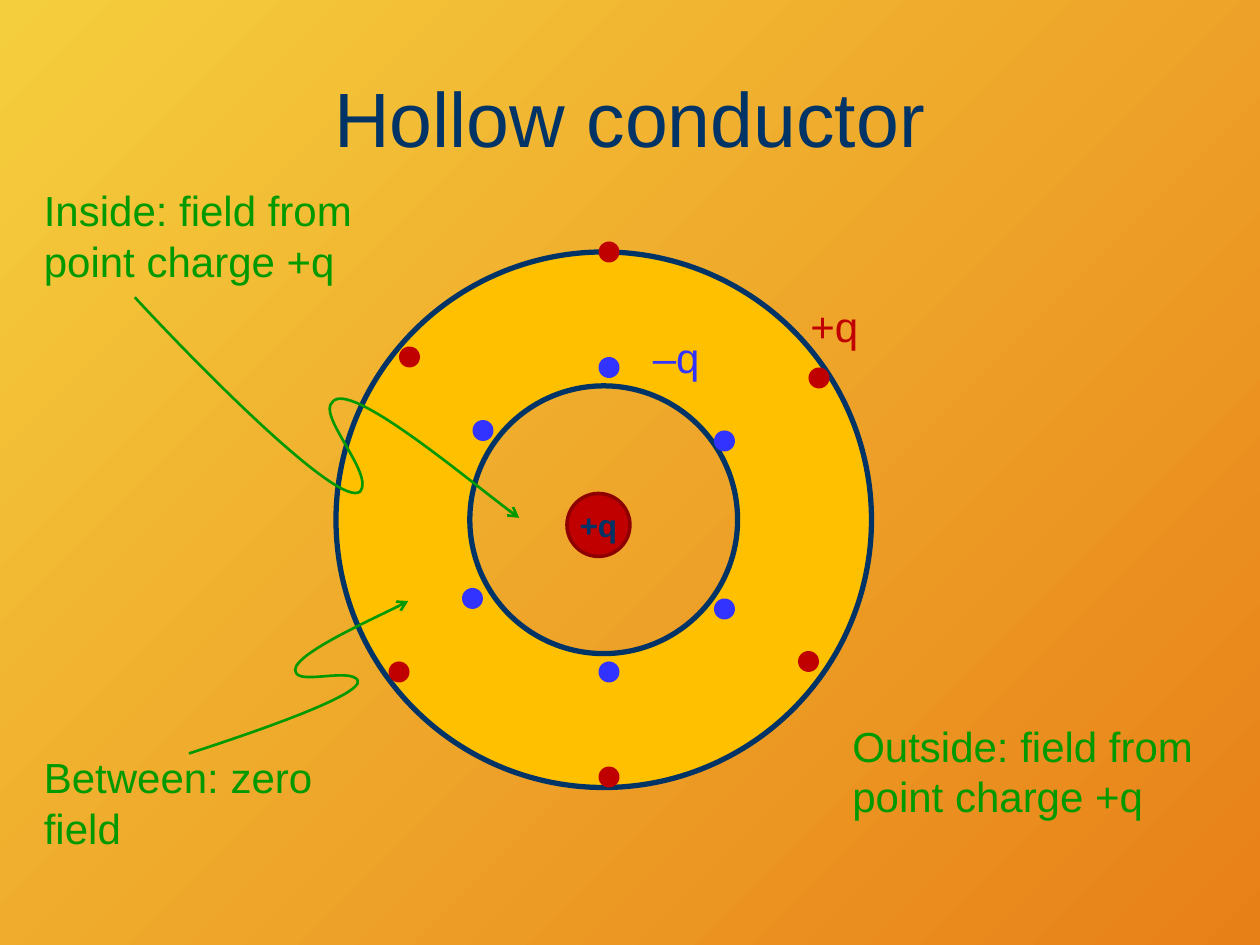
import dataclasses
import typing

import pptx
import pptx.dml.color
import pptx.enum.shapes
import pptx.enum.text
import pptx.oxml
import pptx.oxml.ns
import pptx.util

KIND = pptx.enum.shapes.MSO_SHAPE
ALIGN = pptx.enum.text.PP_ALIGN
ANCHOR = pptx.enum.text.MSO_ANCHOR
NAVY, RED, BLUE, GREEN = "003366", "C00000", "3333FF", "009900"
Point = tuple[float, float]


@dataclasses.dataclass
class Box:
    """Columns and rows of a grid with twelve cells to the inch."""
    col: float
    row: float
    wide: float
    high: float


@dataclasses.dataclass
class Label:
    words: str
    box: Box
    color: str


@dataclasses.dataclass
class Ring:
    """A set of equal charges, each given by its column and row."""
    color: str
    spots: list[Point]


def cell(count: float) -> int:
    return pptx.util.Inches(count / 12)


def place(box: Box) -> list[int]:
    return [cell(n) for n in (box.col, box.row, box.wide, box.high)]


def rgb(code: str) -> pptx.dml.color.RGBColor:
    return pptx.dml.color.RGBColor.from_string(code)


def write(frame: typing.Any, words: str, color: str, size: float = 24,
          bold: bool = False, align: typing.Any = ALIGN.LEFT,
          anchor: typing.Any = ANCHOR.TOP) -> None:
    frame.word_wrap = True
    frame.vertical_anchor = anchor
    para = frame.paragraphs[0]
    para.alignment = align
    run = para.add_run()
    run.text = words
    run.font.name = "Arial"
    run.font.size = pptx.util.Pt(size)
    run.font.bold = bold
    run.font.color.rgb = rgb(color)


def label(slide: typing.Any, item: Label, **style: typing.Any) -> None:
    write(slide.shapes.add_textbox(*place(item.box)).text_frame,
          item.words, item.color, **style)


def shape(slide: typing.Any, kind: typing.Any, box: Box, fill: str,
          edge: str = "", width: float = 0) -> typing.Any:
    item = slide.shapes.add_shape(kind, *place(box))
    item.shadow.inherit = False
    item.fill.solid()
    item.fill.fore_color.rgb = rgb(fill)
    if edge:
        item.line.color.rgb = rgb(edge)
        item.line.width = pptx.util.Pt(width)
    else:
        item.line.fill.background()
    return item


def curve(slide: typing.Any, points: list[Point]) -> None:
    """Draw a Bezier arrow: a start, then three points (inches) per piece."""
    first, *rest = [(pptx.util.Inches(x), pptx.util.Inches(y)) for x, y in points]
    build = slide.shapes.build_freeform(*first)
    build.add_line_segments(rest, close=False)
    item = build.convert_to_shape()
    item.shadow.inherit = False
    item.fill.background()
    item.line.color.rgb = rgb(GREEN)
    item.line.width = pptx.util.Pt(1.5)

    name = pptx.oxml.ns.qn
    steps = list(item.element.iter(name("a:lnTo")))
    for start in range(0, len(steps), 3):
        bend = steps[start].makeelement(name("a:cubicBezTo"), {})
        steps[start].addprevious(bend)
        for step in steps[start:start + 3]:
            bend.append(step[0])
            step.getparent().remove(step)

    head = item.element.makeelement(name("a:tailEnd"), {"type": "arrow"})
    item.element.spPr.find(name("a:ln")).append(head)


def paint(slide: typing.Any) -> None:
    fill = slide.background.fill
    fill.gradient()
    fill.gradient_angle = 315
    for stop, color, spot in zip(fill.gradient_stops, ("F5CE3D", "E88018"), (0, 1)):
        stop.color.rgb = rgb(color)
        stop.position = spot


TITLE = Label("Hollow conductor", Box(6, 3.6, 108, 15), NAVY)
RINGS = [
    Ring(RED, [(57, 23), (57, 73), (77, 35), (37, 63), (38, 33), (76, 62)]),
    Ring(BLUE, [(57, 34), (57, 63), (68, 41), (44, 56), (45, 40), (68, 57)]),
]
LABELS = [
    Label("–q", Box(61, 31, 9, 6), BLUE),
    Label("+q", Box(76, 28, 9, 6), RED),
    Label("Outside: field from point charge +q", Box(80, 68, 35, 11), GREEN),
    Label("Inside: field from point charge +q", Box(3, 17, 35, 11), GREEN),
    Label("Between: zero field", Box(3, 71, 35, 11), GREEN),
]
CURVES = [
    [(1.07, 2.36), (1.56, 2.89), (2.7, 4.05), (2.86, 3.9), (2.97, 3.76),
     (2.51, 3.29), (2.64, 3.19), (2.77, 3.01), (3.86, 3.93), (4.12, 4.11)],
    [(1.5, 5.98), (1.93, 5.84), (2.89, 5.52), (2.84, 5.4), (2.78, 5.3),
     (2.39, 5.43), (2.35, 5.34), (2.27, 5.22), (3.08, 4.86), (3.24, 4.77)],
]


def main() -> None:
    deck = pptx.Presentation()
    deck.slide_width, deck.slide_height = cell(120), cell(90)
    slide = deck.slides.add_slide(deck.slide_layouts[6])
    paint(slide)
    label(slide, TITLE, size=44, align=ALIGN.CENTER, anchor=ANCHOR.MIDDLE)

    core = shape(slide, KIND.OVAL, Box(54, 47, 6, 6), RED, "8E0000", 2)
    frame = core.text_frame
    frame.margin_left = frame.margin_right = 0
    frame.margin_top = frame.margin_bottom = 0
    write(frame, "+q", NAVY, size=18, bold=True,
          align=ALIGN.CENTER, anchor=ANCHOR.MIDDLE)
    shape(slide, KIND.DONUT, Box(32, 24, 51, 51), "FFC000", NAVY, 3)

    for ring in RINGS:
        for col, row in ring.spots:
            shape(slide, KIND.OVAL, Box(col, row, 2, 2), ring.color)
    for item in LABELS:
        label(slide, item)
    for points in CURVES:
        curve(slide, points)
    deck.save("out.pptx")


if __name__ == "__main__":
    main()
